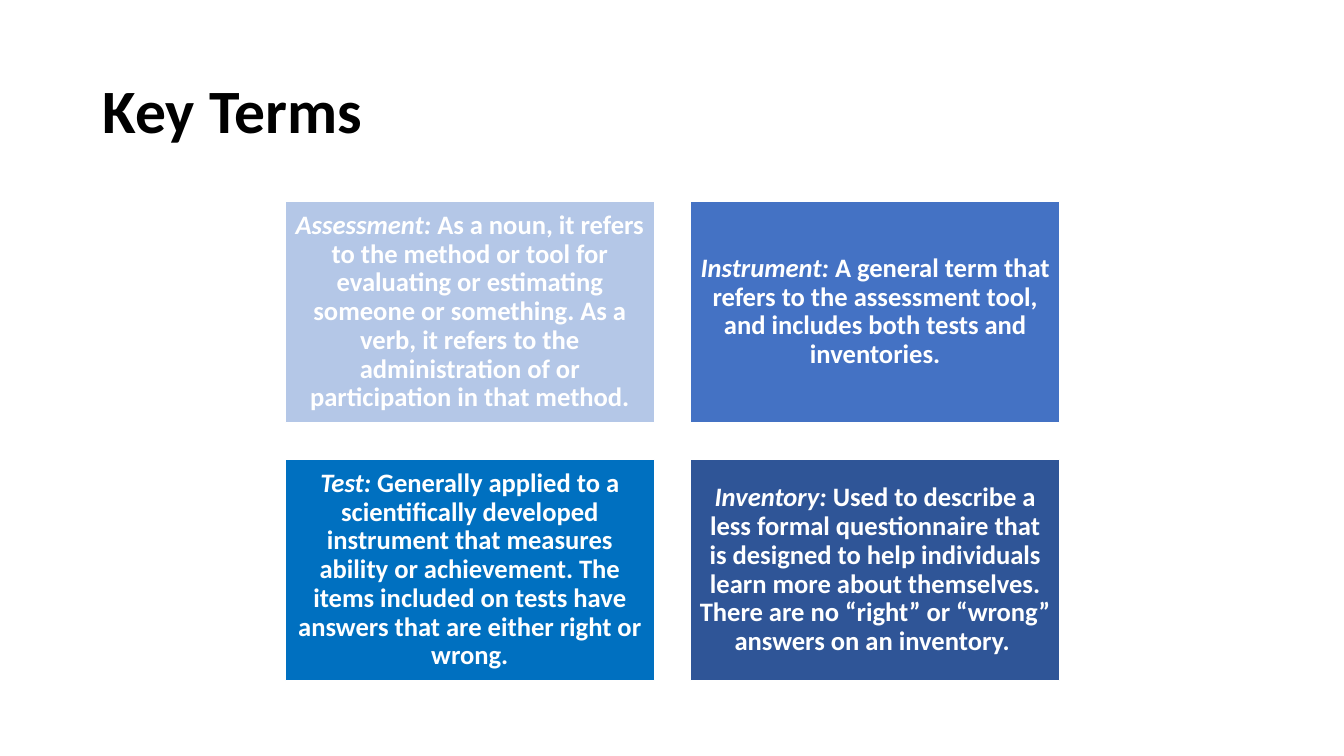
from pptx import Presentation
from pptx.dml.color import RGBColor
from pptx.enum.shapes import MSO_SHAPE as SHAPE
from pptx.enum.text import MSO_ANCHOR as ANCHOR, PP_ALIGN as ALIGN
from pptx.util import Inches, Pt

TITLE = "Key Terms"
TERMS = [
    ("Assessment: ", "As a noun, it refers to the method or tool for evaluating or estimating "
     "someone or something. As a verb, it refers to the administration of "
     "or participation in that method.", "assessment"),
    ("Instrument: ", "A general term that refers to the assessment tool, "
     "and includes both tests and inventories.", "instrument"),
    ("Test: ", "Generally applied to a scientifically developed instrument that measures "
     "ability or achievement. The items included on tests have answers that are "
     "either right or wrong.", "test"),
    ("Inventory: ", "Used to describe a less formal questionnaire that is designed to help "
     "individuals learn more about themselves. There are no “right” or “wrong” "
     "answers on an inventory. ", "inventory"),
]
COLORS = {
    "title": "000000",
    "white": "FFFFFF",
    "assessment": "B4C7E7",
    "instrument": "4472C4",
    "test": "0070C0",
    "inventory": "2F5597",
}
FONT = "Calibri"
COLUMNS = 2
LEFT, TOP = 2.83, 2
BOX_W, BOX_H = 3.66, 2.19
GAP_X, GAP_Y = 0.36, 0.37
INSET = 0.08


def rgb(name):
    return RGBColor.from_string(COLORS[name])


def style_run(r, size, color, italic=False):
    r.font.name = FONT
    r.font.size = Pt(size)
    r.font.bold = True
    r.font.italic = italic
    r.font.color.rgb = rgb(color)


def add_title(slide):
    title = slide.shapes.title
    title.left, title.top = Inches(0.92), Inches(0.4)
    title.width, title.height = Inches(11.5), Inches(1.45)
    tf = title.text_frame
    tf.text = TITLE
    tf.vertical_anchor = ANCHOR.MIDDLE
    p = tf.paragraphs[0]
    p.alignment = ALIGN.LEFT
    p.line_spacing = 0.9
    style_run(p.runs[0], 44, "title")


def add_term(slide, index, term, definition, color):
    row, col = divmod(index, COLUMNS)
    sp = slide.shapes.add_shape(
        SHAPE.RECTANGLE,
        Inches(LEFT + col * (BOX_W + GAP_X)), Inches(TOP + row * (BOX_H + GAP_Y)),
        Inches(BOX_W), Inches(BOX_H))
    sp.shadow.inherit = False
    sp.fill.solid()
    sp.fill.fore_color.rgb = rgb(color)
    sp.line.color.rgb = rgb("white")
    sp.line.width = Pt(1)

    tf = sp.text_frame
    tf.word_wrap = True
    tf.vertical_anchor = ANCHOR.MIDDLE
    tf.margin_left = tf.margin_right = tf.margin_top = tf.margin_bottom = Inches(INSET)
    p = tf.paragraphs[0]
    p.alignment = ALIGN.CENTER
    p.line_spacing = 0.9
    for text, italic in ((term, True), (definition, False)):
        r = p.add_run()
        r.text = text
        style_run(r, 19, "white", italic)


def main():
    prs = Presentation()
    prs.slide_width, prs.slide_height = Inches(13.33), Inches(7.5)
    slide = prs.slides.add_slide(prs.slide_layouts[5])
    add_title(slide)
    for index, (term, definition, color) in enumerate(TERMS):
        add_term(slide, index, term, definition, color)
    prs.save("out.pptx")


if __name__ == "__main__":
    main()
